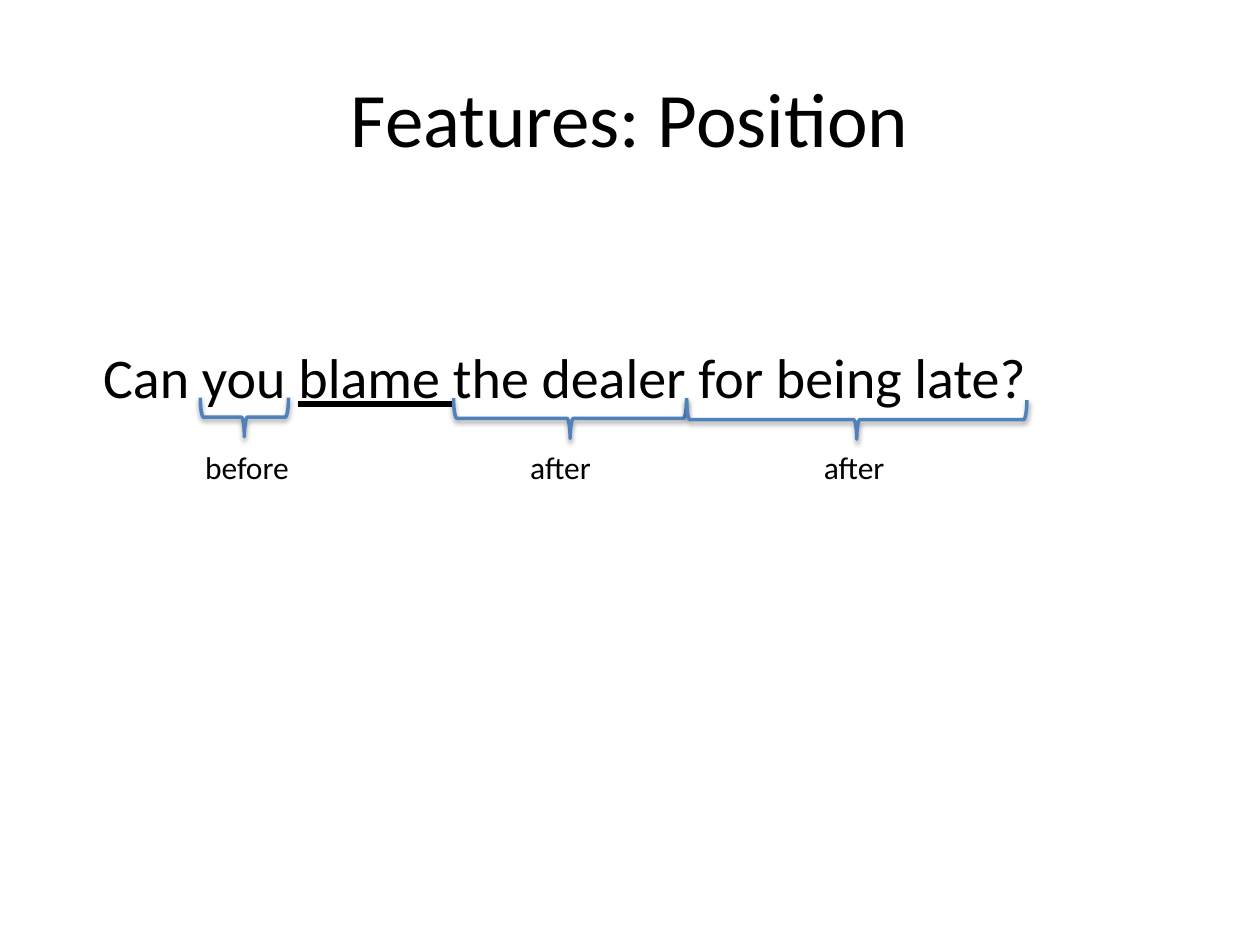
import pptx
import pptx.dml.color
import pptx.enum.shapes
import pptx.enum.text
import pptx.util
from lxml import etree
from pptx.util import Inches, Pt

FONT, BLACK, BLUE = "Calibri", "000000", "4F81BD"
DRAWING = "http://schemas.openxmlformats.org/drawingml/2006/main"
ALIGN = pptx.enum.text.PP_ALIGN
ANCHOR = pptx.enum.text.MSO_ANCHOR

# Runs: (text, underlined)
TITLE = [("Features: Position", False)]
SENTENCE = [("Can you ", False), ("blame ", True),
            ("the dealer for being late?", False)]
# Span start, span end, brace middle height, brace depth, label, label left, label width
SPANS = [
    (1.59, 2.29, 3.31, 0.31, "before", 1.53, 0.87),
    (3.6, 5.45, 3.32, 0.32, "after", 4.11, 0.69),
    (5.45, 8.15, 3.33, 0.31, "after", 6.44, 0.69),
]
LABEL_TOP, LABEL_HEIGHT = 3.51, 0.4


def color(value):
    return pptx.dml.color.RGBColor.from_string(value)


def add_text(slide, box, runs, size, align=ALIGN.LEFT, anchor=ANCHOR.TOP, wrap=True):
    shape = slide.shapes.add_textbox(*map(Inches, box))
    frame = shape.text_frame
    frame.word_wrap = wrap
    frame.vertical_anchor = anchor
    paragraph = frame.paragraphs[0]
    paragraph.alignment = align
    for text, underlined in runs:
        run = paragraph.add_run()
        run.text = text
        style = {"name": FONT, "size": Pt(size), "underline": underlined}
        for key, value in style.items():
            setattr(run.font, key, value)
        run.font.color.rgb = color(BLACK)


def add_soft_shadow(shape):
    shape.shadow.inherit = False
    effects = shape._element.spPr.find(f"{{{DRAWING}}}effectLst")
    shadow = etree.SubElement(
        effects, f"{{{DRAWING}}}outerShdw", blurRad=str(Pt(3.1)),
        dist=str(Pt(1.6)), dir="5400000", rotWithShape="0")
    shade = etree.SubElement(shadow, f"{{{DRAWING}}}srgbClr", val=BLACK)
    etree.SubElement(shade, f"{{{DRAWING}}}alpha", val="38000")


def add_under_brace(slide, start, end, middle, depth):
    """Draw a left brace turned to point down below the span from start to end."""
    length = end - start
    brace = slide.shapes.add_shape(
        pptx.enum.shapes.MSO_SHAPE.LEFT_BRACE,
        Inches((start + end - depth) / 2), Inches(middle - length / 2),
        Inches(depth), Inches(length))
    brace.rotation = 270
    brace.fill.background()
    brace.line.color.rgb = color(BLUE)
    brace.line.width = Pt(2)
    add_soft_shadow(brace)


def main():
    presentation = pptx.Presentation()
    presentation.slide_width, presentation.slide_height = Inches(10), Inches(7.5)
    slide = presentation.slides.add_slide(presentation.slide_layouts[6])
    add_text(slide, (0.5, 0.3, 9, 1.25), TITLE, 44, ALIGN.CENTER, ANCHOR.MIDDLE)
    add_text(slide, (0.72, 2.67, 9, 0.64), SENTENCE, 32)
    for start, end, middle, depth, label, left, width in SPANS:
        add_under_brace(slide, start, end, middle, depth)
        add_text(slide, (left, LABEL_TOP, width, LABEL_HEIGHT),
                 [(label, False)], 18, wrap=False)
    presentation.save("out.pptx")


if __name__ == "__main__":
    main()
